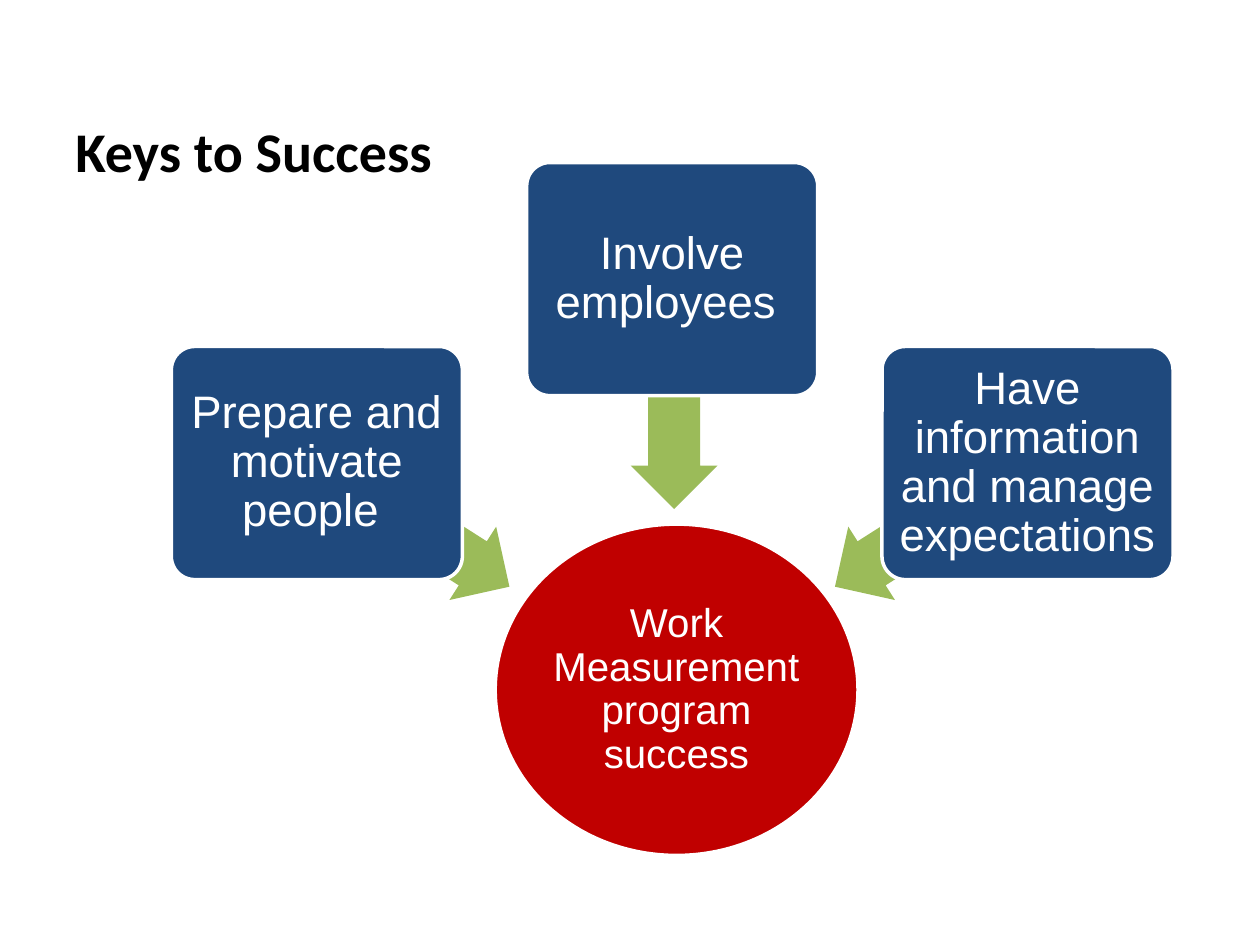
from dataclasses import dataclass

import pptx
import pptx.util
from pptx.dml.color import RGBColor
from pptx.enum.shapes import MSO_SHAPE
from pptx.enum.text import MSO_ANCHOR, PP_ALIGN
from pptx.util import Inches

WHITE, BLACK = "FFFFFF", "000000"
NAVY, RED, GREEN = "1F497D", "C00000", "9BBB59"
BOX_W, BOX_H = 2.31, 1.85
ARROW_H = 0.69


@dataclass
class Key:
    text: str
    left: float
    top: float
    mid_x: float   # centre of the arrow
    mid_y: float
    length: float
    turn: float


KEYS = [
    Key("Prepare and motivate people ", 1.36, 2.75, 3.28, 4.17, 1.81, 212.5),
    Key("Involve employees ", 4.18, 1.29, 5.35, 3.12, 1.84, 270),
    Key("Have information and manage expectations",
        7, 2.75, 7.39, 4.17, 1.81, 327.5),
]


def tint(color: str) -> RGBColor:
    return RGBColor.from_string(color)


def write(shape, text: str, size: float, font: str, color: str,
          space: float, inset: float, bold: bool = False) -> None:
    frame = shape.text_frame
    frame.word_wrap = True
    frame.margin_left = frame.margin_right = Inches(inset)
    frame.margin_top = frame.margin_bottom = Inches(inset)
    para = frame.paragraphs[0]
    para.line_spacing = space
    run = para.add_run()
    run.text = text
    run.font.size = pptx.util.Pt(size)
    run.font.name = font
    run.font.bold = bold
    run.font.color.rgb = tint(color)


def draw(slide, kind, left: float, top: float, width: float, height: float,
         fill: str):
    shape = slide.shapes.add_shape(
        kind, Inches(left), Inches(top), Inches(width), Inches(height))
    shape.shadow.inherit = False
    shape.fill.solid()
    shape.fill.fore_color.rgb = tint(fill)
    shape.line.fill.background()
    return shape


def label(shape, text: str, size: float, inset: float) -> None:
    shape.line.color.rgb = tint(WHITE)
    shape.line.width = pptx.util.Pt(2)
    write(shape, text, size, "Arial", WHITE, 0.9, inset)
    shape.text_frame.vertical_anchor = MSO_ANCHOR.MIDDLE
    shape.text_frame.paragraphs[0].alignment = PP_ALIGN.CENTER


def add_key(slide, key: Key) -> None:
    arrow = draw(slide, MSO_SHAPE.LEFT_ARROW, key.mid_x - key.length / 2,
                 key.mid_y - ARROW_H / 2, key.length, ARROW_H, GREEN)
    arrow.adjustments[0] = 0.6
    arrow.adjustments[1] = 0.5
    arrow.rotation = key.turn
    box = draw(slide, MSO_SHAPE.ROUNDED_RECTANGLE, key.left, key.top,
               BOX_W, BOX_H, NAVY)
    box.adjustments[0] = 0.1
    label(box, key.text, 26, 0.06)


def main() -> None:
    deck = pptx.Presentation()
    deck.slide_width, deck.slide_height = Inches(10), Inches(7.5)
    slide = deck.slides.add_slide(deck.slide_layouts[6])

    # Title
    title = slide.shapes.add_textbox(
        Inches(0.5), Inches(0.76), Inches(9), Inches(0.71))
    write(title, "Keys to Success", 32, "Calibri", BLACK, 1.12, 0.1, True)

    # Goal
    goal = draw(slide, MSO_SHAPE.OVAL, 3.93, 4.16, 2.88, 2.63, RED)
    label(goal, "Work Measurement program success", 23, 0.03)

    # Keys, each with its arrow to the goal
    for key in KEYS:
        add_key(slide, key)

    deck.save("out.pptx")


if __name__ == "__main__":
    main()
